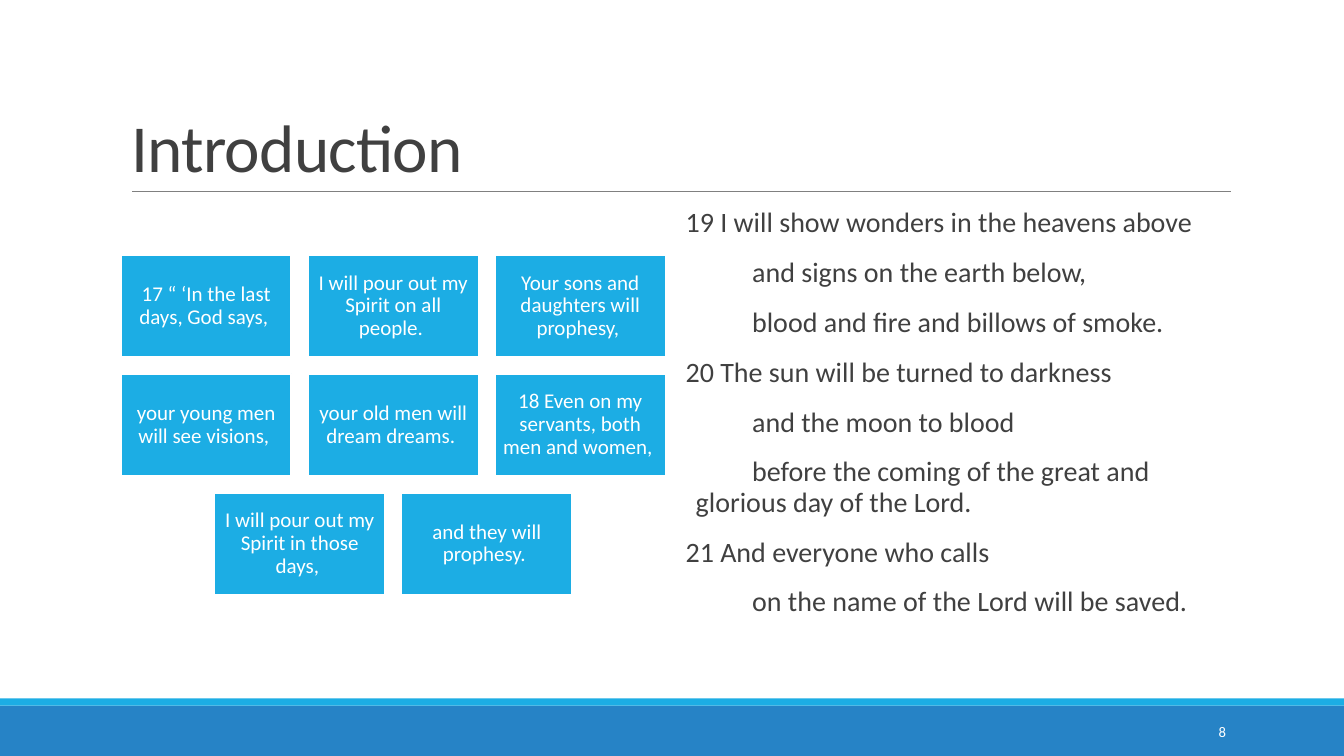
from dataclasses import dataclass

from lxml.etree import SubElement
from pptx import Presentation
from pptx.dml.color import RGBColor
from pptx.enum.shapes import MSO_CONNECTOR, MSO_SHAPE
from pptx.enum.text import MSO_ANCHOR, MSO_AUTO_SIZE, PP_ALIGN
from pptx.oxml.ns import qn
from pptx.shapes.autoshape import Shape
from pptx.slide import Slide
from pptx.text.text import TextFrame
from pptx.util import Inches, Pt

SLIDE_WIDTH, SLIDE_HEIGHT = 13.33, 7.5
FONT = "Calibri"
WHITE, GREY, DARK = "FFFFFF", "808080", "404040"
BLUE, CYAN = "2683C6", "1CADE4"


@dataclass(frozen=True)
class Box:
    left: float
    top: float
    width: float
    height: float

    def lengths(self) -> tuple[int, int, int, int]:
        return (Inches(self.left), Inches(self.top),
                Inches(self.width), Inches(self.height))


@dataclass(frozen=True)
class Verse:
    opening: str
    continuations: tuple[str, ...]


TITLE = Box(1.2, 0.31, 11, 1.59)
TILE_GRID = Box(1.2, 2.53, 5.4, 3.37)
TILE_WIDTH, TILE_HEIGHT = 1.69, 1.01
VERSES_BOX = Box(6.8, 2.02, 5.4, 4.4)
NUMBER_BOX = Box(10.83, 7.06, 1.43, 0.4)
BANDS = ((Box(0, 7, SLIDE_WIDTH, 0.5), BLUE),
         (Box(0, 6.93, SLIDE_WIDTH, 0.07), CYAN))

TILE_ROWS = (
    ("17 “ ‘In the last days, God says, ",
     "I will pour out my Spirit on all people. ",
     "Your sons and daughters will prophesy, "),
    ("your young men will see visions, ",
     "your old men will dream dreams. ",
     "18 Even on my servants, both men and women, "),
    ("I will pour out my Spirit in those days, ",
     "and they will prophesy. "),
)

VERSES = (
    Verse("19 I will show wonders in the heavens above",
          ("and signs on the earth below,",
           "blood and fire and billows of smoke.")),
    Verse("20 The sun will be turned to darkness",
          ("and the moon to blood",
           "before the coming of the great and glorious day of the Lord.")),
    Verse("21 And everyone who calls",
          ("on the name of the Lord will be saved.",)),
)


def color(value: str) -> RGBColor:
    return RGBColor.from_string(value)


def format_text(frame: TextFrame, size: float, text_color: str,
                alignment: PP_ALIGN = PP_ALIGN.LEFT,
                anchor: MSO_ANCHOR = MSO_ANCHOR.TOP,
                line_spacing: float = 1.0) -> None:
    frame.word_wrap = True
    frame.auto_size = MSO_AUTO_SIZE.NONE
    frame.vertical_anchor = anchor
    for paragraph in frame.paragraphs:
        paragraph.alignment = alignment
        paragraph.line_spacing = line_spacing
        for run in paragraph.runs:
            run.font.name = FONT
            run.font.size = Pt(size)
            run.font.color.rgb = color(text_color)


def add_rectangle(slide: Slide, box: Box, fill: str) -> Shape:
    shape = slide.shapes.add_shape(MSO_SHAPE.RECTANGLE, *box.lengths())
    shape.shadow.inherit = False
    shape.fill.solid()
    shape.fill.fore_color.rgb = color(fill)
    shape.line.fill.background()
    return shape


def add_title(slide: Slide) -> None:
    title = slide.shapes.title
    title.left, title.top, title.width, title.height = TITLE.lengths()
    title.text_frame.text = "Introduction"
    format_text(title.text_frame, 48, DARK, anchor=MSO_ANCHOR.BOTTOM,
                line_spacing=0.85)
    run = title.text_frame.paragraphs[0].runs[0]
    run.font._element.set("spc", "-50")


def add_title_rule(slide: Slide) -> None:
    rule = slide.shapes.add_connector(
        MSO_CONNECTOR.STRAIGHT,
        Inches(1.31), Inches(1.9), Inches(12.21), Inches(1.9))
    rule.line.color.rgb = color(GREY)
    rule.line.width = Pt(0.5)
    SubElement(rule._element.spPr, qn("a:effectLst"))


def add_tile(slide: Slide, box: Box, text: str) -> None:
    tile = add_rectangle(slide, box, CYAN)
    tile.line.color.rgb = color(WHITE)
    tile.line.width = Pt(1.25)
    frame = tile.text_frame
    frame.margin_left = frame.margin_right = Inches(0.06)
    frame.margin_top = frame.margin_bottom = Inches(0.06)
    frame.text = text
    format_text(frame, 15, WHITE, PP_ALIGN.CENTER, MSO_ANCHOR.MIDDLE, 0.9)


def add_tiles(slide: Slide) -> None:
    """Lay the tiles out in evenly spaced rows, each centred in the grid."""
    columns, rows = len(TILE_ROWS[0]), len(TILE_ROWS)
    column_step = (TILE_GRID.width - TILE_WIDTH) / (columns - 1)
    row_step = (TILE_GRID.height - TILE_HEIGHT) / (rows - 1)
    for row, texts in enumerate(TILE_ROWS):
        row_left = TILE_GRID.left + (columns - len(texts)) * column_step / 2
        for column, text in enumerate(texts):
            add_tile(slide, Box(row_left + column * column_step,
                                TILE_GRID.top + row * row_step,
                                TILE_WIDTH, TILE_HEIGHT), text)


def add_verses(slide: Slide) -> None:
    frame = slide.shapes.add_textbox(*VERSES_BOX.lengths()).text_frame
    frame.margin_left = frame.margin_right = 0
    lines = [(text, position > 0) for verse in VERSES
             for position, text in enumerate((verse.opening, *verse.continuations))]
    frame.text = "\n".join(text for text, _ in lines)
    format_text(frame, 20, DARK, line_spacing=0.9)
    for paragraph, (_, continued) in zip(frame.paragraphs, lines):
        paragraph.space_before = Pt(12)
        paragraph.space_after = Pt(2)
        if continued:
            properties = paragraph._p.get_or_add_pPr()
            properties.set("marL", str(Inches(0.1)))
            properties.set("indent", str(Inches(0.56)))


def add_slide_number(slide: Slide) -> None:
    frame = slide.shapes.add_textbox(*NUMBER_BOX.lengths()).text_frame
    frame.text = "8"
    format_text(frame, 10.5, WHITE, PP_ALIGN.RIGHT, MSO_ANCHOR.MIDDLE)


def main() -> None:
    presentation = Presentation()
    presentation.slide_width = Inches(SLIDE_WIDTH)
    presentation.slide_height = Inches(SLIDE_HEIGHT)
    title_only = presentation.slide_layouts.get_by_name("Title Only")
    slide = presentation.slides.add_slide(title_only)
    for box, fill in BANDS:
        add_rectangle(slide, box, fill)
    add_title_rule(slide)
    add_title(slide)
    add_tiles(slide)
    add_verses(slide)
    add_slide_number(slide)
    presentation.save("out.pptx")


if __name__ == "__main__":
    main()
